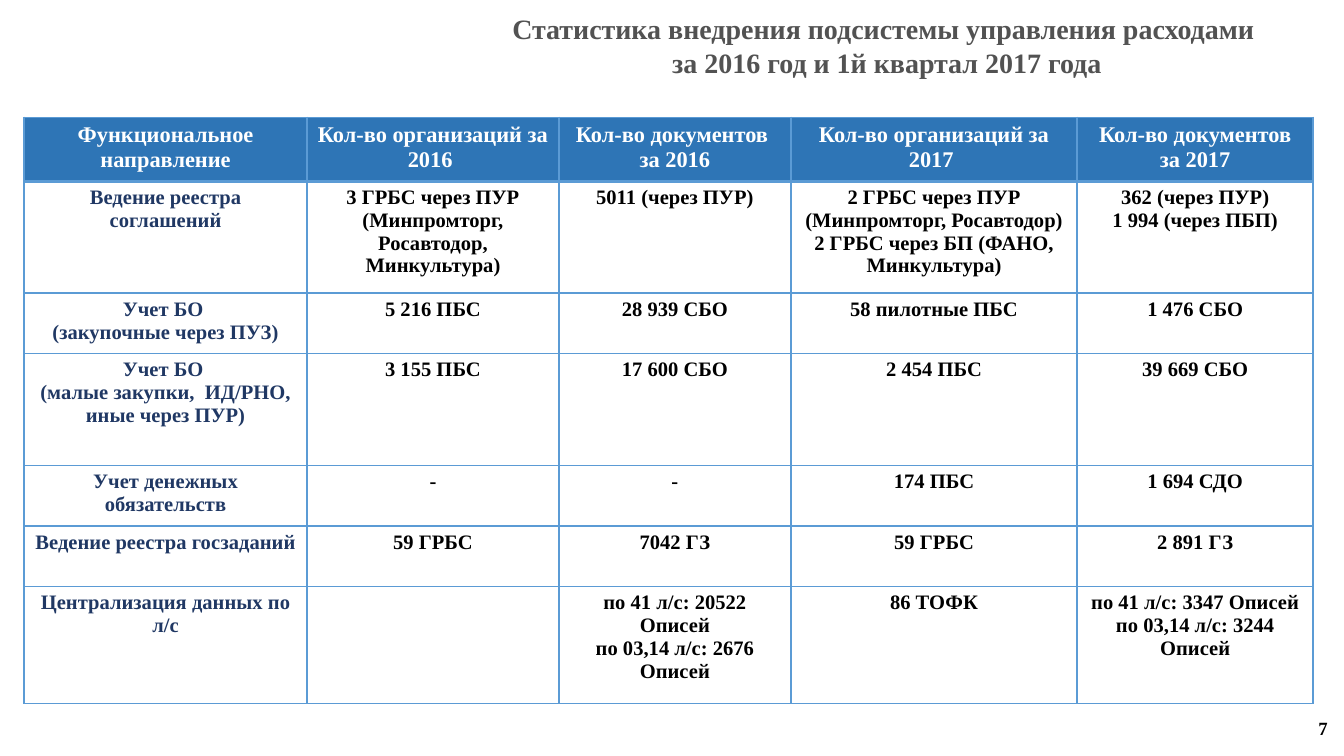
"""Build a slide with a table of expenditure subsystem rollout statistics."""
from lxml import etree
from pptx import Presentation
from pptx.dml.color import RGBColor
from pptx.enum.text import MSO_ANCHOR, PP_ALIGN
from pptx.oxml.ns import qn
from pptx.util import Pt

CENTER, RIGHT = PP_ALIGN.CENTER, PP_ALIGN.RIGHT
TOP, MIDDLE = MSO_ANCHOR.TOP, MSO_ANCHOR.MIDDLE
WHITE = RGBColor(0xFF, 0xFF, 0xFF)
BLACK = RGBColor(0x00, 0x00, 0x00)
GRAY = RGBColor(0x52, 0x52, 0x52)
NAVY = RGBColor(0x20, 0x38, 0x64)
BLUE = RGBColor(0x2E, 0x75, 0xB6)
BORDER = RGBColor(0x5B, 0x9B, 0xD5)
FONT = "Times New Roman"

TITLE = ["Статистика внедрения подсистемы управления расходами",
         " за 2016 год и 1й квартал 2017 года"]
PAGE = ["7"]
HEADER = [
    ["Функциональное направление"],
    ["Кол-во организаций за 2016 "],
    ["Кол-во документов ", "за 2016"],
    ["Кол-во организаций за 2017 "],
    ["Кол-во документов за 2017"],
]
BODY = [
    [["Ведение реестра соглашений"],
     ["3 ГРБС через ПУР (Минпромторг, Росавтодор, Минкультура)"],
     ["5011 (через ПУР)"],
     ["2 ГРБС через ПУР (Минпромторг, Росавтодор)",
      "2 ГРБС через БП (ФАНО, Минкультура)"],
     ["362 (через ПУР)", "1 994 (через ПБП)"]],
    [["Учет БО ", "(закупочные через ПУЗ)"],
     ["5 216 ПБС"], ["28 939 СБО"], ["58 пилотные ПБС"], ["1 476 СБО"]],
    [["Учет БО ", "(малые закупки,  ИД/РНО, иные через ПУР)"],
     ["3 155 ПБС"], ["17 600 СБО"], ["2 454 ПБС"], ["39 669 СБО"]],
    [["Учет денежных обязательств"],
     ["-"], ["-"], ["174 ПБС"], ["1 694 СДО"]],
    [["Ведение реестра госзаданий"],
     ["59 ГРБС"], ["7042 ГЗ"], ["59 ГРБС"], ["2 891 ГЗ"]],
    [["Централизация данных по л/с"],
     [],
     ["по 41 л/с: 20522 Описей", "по 03,14 л/с: 2676 Описей"],
     ["86 ТОФК"],
     ["по 41 л/с: 3347 Описей", "по 03,14 л/с: 3244 Описей"]],
]
COL_WIDTHS = [151.7, 134.8, 124.4, 153.3, 126.5]
ROW_HEIGHTS = [34.2, 59.9, 32.5, 59.9, 32.5, 32.4, 62.6]
TABLE_LEFT, TABLE_TOP = 12.9, 62.9


def set_margins(frame):
    frame.margin_left = frame.margin_right = Pt(5.2)
    frame.margin_top = frame.margin_bottom = Pt(2.6)


def write(tf, lines, size, color, align):
    for i, line in enumerate(lines):
        p = tf.add_paragraph() if i else tf.paragraphs[0]
        p.alignment = align
        r = p.add_run()
        r.text = line
        r.font.name = FONT
        r.font.size = Pt(size)
        r.font.bold = True
        r.font.color.rgb = color


def add_text(slide, box, lines, size, color, align, anchor):
    sp = slide.shapes.add_textbox(*map(Pt, box))
    tf = sp.text_frame
    tf.word_wrap = True
    tf.vertical_anchor = anchor
    set_margins(tf)
    write(tf, lines, size, color, align)


def set_borders(cell, widths):
    tc_pr = cell._tc.get_or_add_tcPr()
    for side, width in widths.items():
        ln = etree.SubElement(tc_pr, qn(f"a:ln{side}"), w=str(Pt(width)))
        fill = etree.SubElement(ln, qn("a:solidFill"))
        etree.SubElement(fill, qn("a:srgbClr"), val=str(BORDER))


def add_table(slide):
    rows = [HEADER] + BODY
    frame = slide.shapes.add_table(
        len(rows), len(HEADER), Pt(TABLE_LEFT), Pt(TABLE_TOP),
        Pt(sum(COL_WIDTHS)), Pt(sum(ROW_HEIGHTS)))
    table = frame.table
    table.first_row = table.horz_banding = False
    for column, width in zip(table.columns, COL_WIDTHS):
        column.width = Pt(width)
    for i, (row, height) in enumerate(zip(rows, ROW_HEIGHTS)):
        table.rows[i].height = Pt(height)
        for j, lines in enumerate(row):
            cell = table.cell(i, j)
            set_margins(cell)
            set_borders(cell, {"L": 1, "R": 1, "T": 2 if i == 1 else 1,
                               "B": 2 if i == 0 else 1})
            if i == 0:
                cell.fill.solid()
                cell.fill.fore_color.rgb = BLUE
                size, color = 12, WHITE
            else:
                cell.fill.background()
                size, color = 11, BLACK if j else NAVY
            write(cell.text_frame, lines, size, color, CENTER)


def main():
    prs = Presentation()
    prs.slide_width, prs.slide_height = Pt(720), Pt(405)
    slide = prs.slides.add_slide(prs.slide_layouts[6])
    add_text(slide, (554.4, 379.4, 162, 21.6), PAGE, 10, BLACK, RIGHT, MIDDLE)
    add_table(slide)
    add_text(slide, (236.9, 3.6, 473, 41.8), TITLE, 15, GRAY, CENTER, TOP)
    prs.save("out.pptx")


if __name__ == "__main__":
    main()
